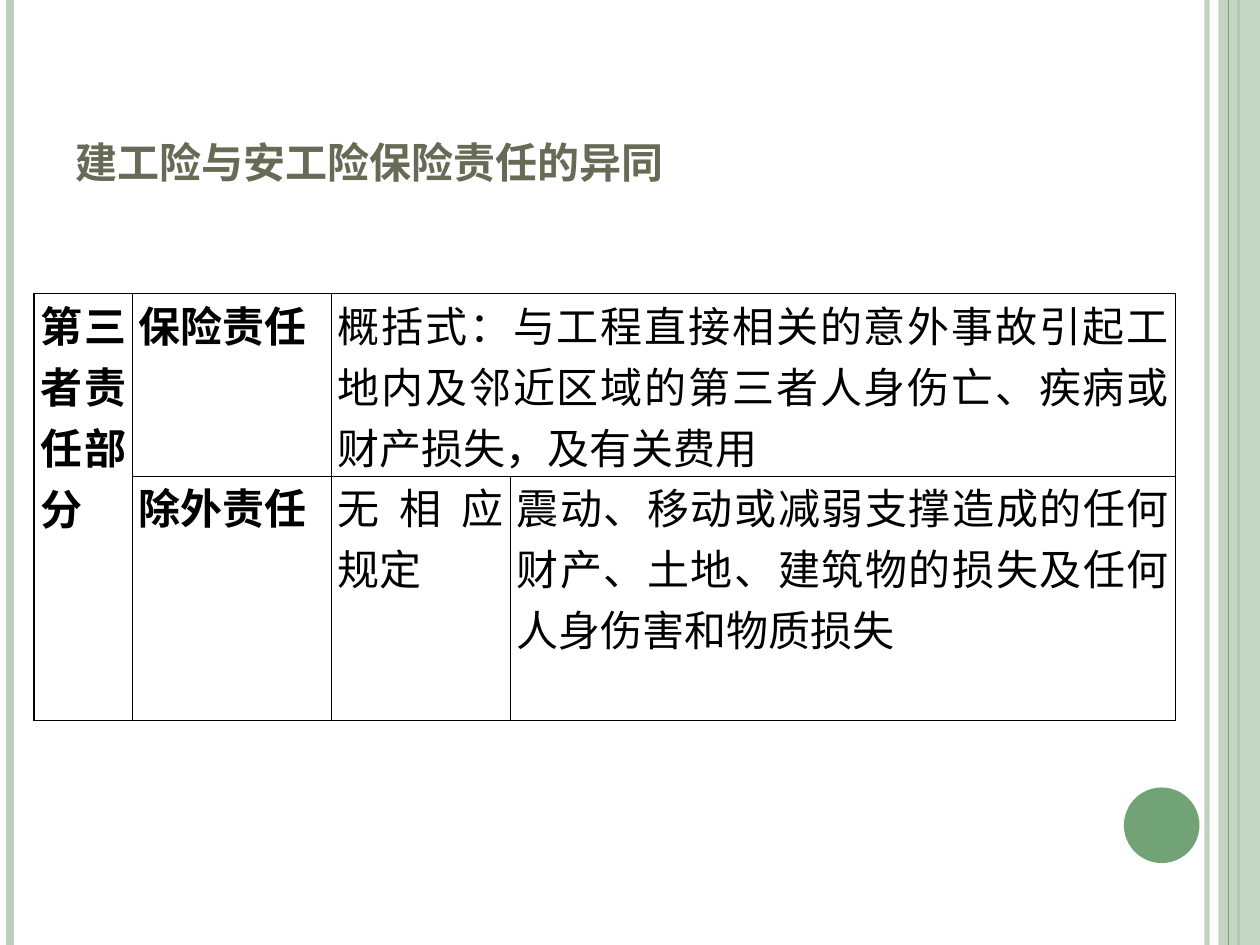
from dataclasses import dataclass

from lxml import etree
from pptx import Presentation
from pptx.dml.color import RGBColor
from pptx.enum.shapes import MSO_CONNECTOR, MSO_SHAPE
from pptx.enum.text import MSO_ANCHOR, PP_ALIGN
from pptx.oxml.ns import qn
from pptx.util import Inches, Pt

STRAIGHT = MSO_CONNECTOR.STRAIGHT
RECT, OVAL = MSO_SHAPE.RECTANGLE, MSO_SHAPE.OVAL
BOTTOM, JUSTIFY = MSO_ANCHOR.BOTTOM, PP_ALIGN.JUSTIFY


@dataclass(frozen=True)
class Theme:
    pale: str = "BCCEBD"
    green: str = "72A376"
    title: str = "676A55"
    ink: str = "000000"
    title_font: str = "Cambria"
    body_font: str = "Times New Roman"
    title_size: int = 30
    body_size: int = 24


THEME = Theme()
SLIDE_W, SLIDE_H = 10, 7.5


def rgb(color):
    return RGBColor.from_string(color)


def set_alpha(fill_parent, percent):
    clr = fill_parent.find(".//" + qn("a:srgbClr"))
    etree.SubElement(clr, qn("a:alpha")).set("val", str(percent * 1000))


def add_run(p, text, font, size, color, bold):
    r = p.add_run()
    r.text = text
    r.font.name = font
    r.font.size = Pt(size)
    r.font.color.rgb = rgb(color)
    r.font.bold = bold
    return r


def add_stripe(slide, x, color, width, alpha=100):
    """Vertical line over the full slide height."""
    line = slide.shapes.add_connector(
        STRAIGHT, Inches(x), 0, Inches(x), Inches(SLIDE_H))
    line.line.color.rgb = rgb(color)
    line.line.width = Pt(width)
    sp_pr = line._element.spPr
    if alpha < 100:
        set_alpha(sp_pr, alpha)
    etree.SubElement(sp_pr, qn("a:effectLst"))


def add_filled(slide, kind, box, color, alpha=100):
    sp = slide.shapes.add_shape(kind, *map(Inches, box))
    sp.shadow.inherit = False
    sp.fill.solid()
    sp.fill.fore_color.rgb = rgb(color)
    sp.line.fill.background()
    if alpha < 100:
        set_alpha(sp._element.spPr, alpha)


def add_frame(slide):
    """Side stripes, right band and corner disc."""
    add_stripe(slide, 9.58, THEME.pale, 3, 93)
    add_stripe(slide, 0.08, THEME.pale, 4.5)
    add_stripe(slide, 9.83, THEME.green, 1.5)
    add_filled(slide, RECT, (9.67, 0, SLIDE_W - 9.67, SLIDE_H), THEME.pale, 87)
    add_stripe(slide, 9.75, THEME.green, 0.75)
    add_filled(slide, OVAL, (8.92, 6.25, 0.6, 0.6), THEME.green)


def add_title(slide, box, text):
    tf = slide.shapes.add_textbox(*map(Inches, box)).text_frame
    tf.word_wrap = True
    tf.vertical_anchor = BOTTOM
    r = add_run(tf.paragraphs[0], text, THEME.title_font, THEME.title_size,
                THEME.title, True)
    r.font._element.set("cap", "small")


def style_cell(cell):
    cell.margin_left = cell.margin_right = Inches(0.05)
    cell.margin_top = cell.margin_bottom = 0
    tc_pr = cell._tc.get_or_add_tcPr()
    for side in ("lnL", "lnR", "lnT", "lnB"):
        ln = etree.SubElement(tc_pr, qn("a:" + side), w=str(Pt(1)))
        fill = etree.SubElement(ln, qn("a:solidFill"))
        etree.SubElement(fill, qn("a:srgbClr"), val=THEME.ink)
    cell.fill.background()


def add_liability_table(slide, left, top, col_widths, row_heights, texts):
    """texts maps (row, column) to (text, bold)."""
    box = (left, top, sum(col_widths), sum(row_heights))
    table = slide.shapes.add_table(
        len(row_heights), len(col_widths), *map(Inches, box)).table
    table.first_row = table.horz_banding = False
    for col, width in zip(table.columns, col_widths):
        col.width = Inches(width)
    for row, height in zip(table.rows, row_heights):
        row.height = Inches(height)
    for cell in table.iter_cells():
        style_cell(cell)
    table.cell(0, 0).merge(table.cell(1, 0))
    table.cell(0, 2).merge(table.cell(0, 3))
    for (row, col), (text, bold) in texts.items():
        p = table.cell(row, col).text_frame.paragraphs[0]
        p.alignment = JUSTIFY
        add_run(p, text, THEME.body_font, THEME.body_size, THEME.ink, bold)


def main():
    prs = Presentation()
    prs.slide_width, prs.slide_height = Inches(SLIDE_W), Inches(SLIDE_H)
    slide = prs.slides.add_slide(prs.slide_layouts[6])
    add_frame(slide)
    add_title(slide, (0.5, 0.3, 9, 1.25), "建工险与安工险保险责任的异同")
    add_liability_table(
        slide, 0.27, 2.33, (0.78, 1.58, 1.42, 5.28), (1.45, 1.94), {
            (0, 0): ("第三者责任部分", True),
            (0, 1): ("保险责任", True),
            (0, 2): ("概括式：与工程直接相关的意外事故引起工地内及邻近区域的"
                     "第三者人身伤亡、疾病或财产损失，及有关费用", False),
            (1, 1): ("除外责任", True),
            (1, 2): ("无相应规定", False),
            (1, 3): ("震动、移动或减弱支撑造成的任何财产、土地、建筑物的损失"
                     "及任何人身伤害和物质损失", False),
        })
    prs.save("out.pptx")


if __name__ == "__main__":
    main()
